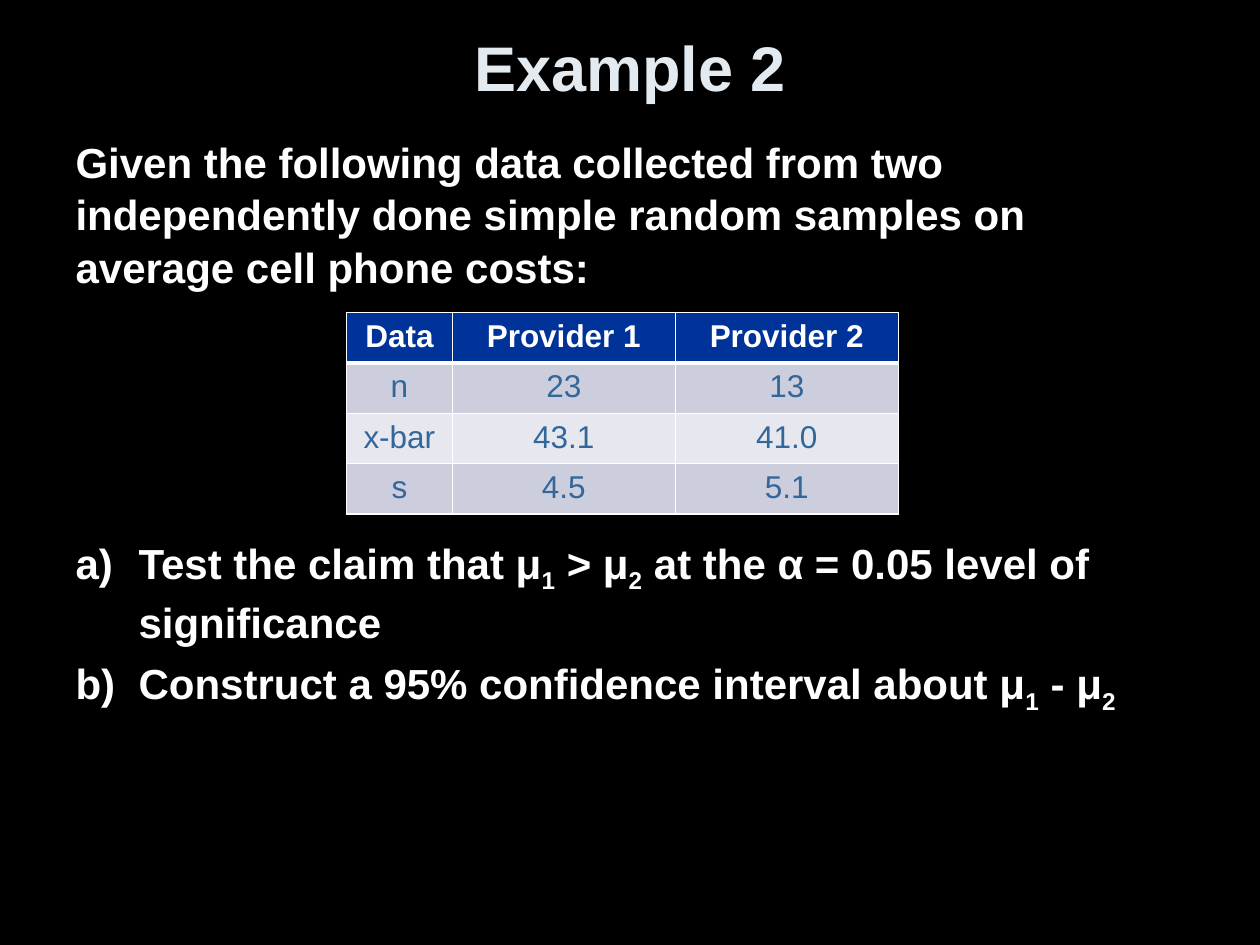
from lxml.etree import SubElement
from pptx import Presentation
from pptx.dml.color import RGBColor
from pptx.enum.text import MSO_ANCHOR, MSO_AUTO_SIZE, PP_ALIGN
from pptx.oxml.ns import qn
from pptx.util import Inches, Pt

HUES = {
    "back": "000000", "title": "E3EBF1", "text": "FFFFFF", "head": "003399",
    "cell": "336699", "odd": "CCCEDE", "even": "E7E8EF", "line": "FFFFFF",
}
WIDE, HIGH = Inches(10), Inches(7.5)
INTRO = ("Given the following data collected from two independently done "
         "simple random samples on average cell phone costs:")
TASKS = [
    ["Test the claim that μ", "1", " > μ", "2",
     " at the α = 0.05 level of significance"],
    ["Construct a 95% confidence interval about μ", "1", " - μ", "2"],
]
DATA = [
    ["Data", "Provider 1", "Provider 2"],
    ["n", "23", "13"],
    ["x-bar", "43.1", "41.0"],
    ["s", "4.5", "5.1"],
]
COLS = [0.84, 1.77, 1.77]
ROW = 0.4


def hue(name):
    return RGBColor.from_string(HUES[name])


def style(para, size, name, bold=True):
    font = para.font
    font.name, font.size, font.bold = "Arial", Pt(size), bold
    font.color.rgb = hue(name)


def place(shape, left, top, width, height):
    shape.left, shape.top = int(WIDE * left), int(HIGH * top)
    shape.width, shape.height = int(WIDE * width), int(HIGH * height)
    shape.text_frame.auto_size = MSO_AUTO_SIZE.NONE
    shape.text_frame.word_wrap = True


def add_title(slide):
    title = slide.shapes.title
    place(title, 0.05, 0.01, 0.9, 0.12)
    title.text_frame.vertical_anchor = MSO_ANCHOR.MIDDLE
    para = title.text_frame.paragraphs[0]
    para.text = "Example 2"
    para.alignment = PP_ALIGN.CENTER
    style(para, 36, "title")


def set_mark(para, kind, indent):
    props = para._p.get_or_add_pPr()
    props.set("marL", str(Inches(indent)))
    props.set("indent", str(-Inches(indent)))
    mark = SubElement(props, qn(f"a:{kind}"))
    if kind == "buAutoNum":
        mark.set("type", "alphaLcParenR")


def add_task(frame, parts, gap):
    para = frame.add_paragraph()
    set_mark(para, "buAutoNum", 0.5)
    para.space_before, para.line_spacing = Pt(gap), 1.04
    style(para, 24, "text")
    for part in parts:
        run = para.add_run()
        run.text = part
        if part.isdigit():
            run.font._element.set("baseline", "-25000")


def add_body(slide):
    body = slide.placeholders[1]
    place(body, 0.05, 0.133, 0.9, 0.623)
    frame = body.text_frame
    frame.margin_top = Inches(0.07)
    frame.vertical_anchor = MSO_ANCHOR.TOP
    para = frame.paragraphs[0]
    para.text = INTRO
    set_mark(para, "buNone", 0)
    para.space_before, para.line_spacing = Pt(0), 1.04
    style(para, 24, "text")
    for parts, gap in zip(TASKS, [139, 4.8]):
        add_task(frame, parts, gap)


def edge(cell, side, width):
    props = cell._tc.get_or_add_tcPr()
    line = SubElement(props, qn(f"a:ln{side}"), w=str(Pt(width)))
    fill = SubElement(line, qn("a:solidFill"))
    SubElement(fill, qn("a:srgbClr"), val=HUES["line"])


def fill_cell(cell, text, row):
    for side in "LRTB":
        thick = (row, side) in [(0, "B"), (1, "T")]
        edge(cell, side, 3 if thick else 1)
    shade = "head" if row == 0 else "odd" if row % 2 else "even"
    cell.fill.solid()
    cell.fill.fore_color.rgb = hue(shade)
    para = cell.text_frame.paragraphs[0]
    para.text = text
    para.alignment = PP_ALIGN.CENTER
    style(para, 18, "cell" if row else "text", row == 0)


def add_grid(slide):
    grid = slide.shapes.add_table(
        len(DATA), len(COLS), Inches(2.75), Inches(2.48),
        Inches(sum(COLS)), Inches(ROW * len(DATA))).table
    for col, width in zip(grid.columns, COLS):
        col.width = Inches(width)
    for r, line in enumerate(DATA):
        grid.rows[r].height = Inches(ROW)
        for c, text in enumerate(line):
            fill_cell(grid.cell(r, c), text, r)


def main():
    deck = Presentation()
    deck.slide_width, deck.slide_height = WIDE, HIGH
    slide = deck.slides.add_slide(deck.slide_layouts[1])
    slide.background.fill.solid()
    slide.background.fill.fore_color.rgb = hue("back")
    add_title(slide)
    add_body(slide)
    add_grid(slide)
    deck.save("out.pptx")


if __name__ == "__main__":
    main()
